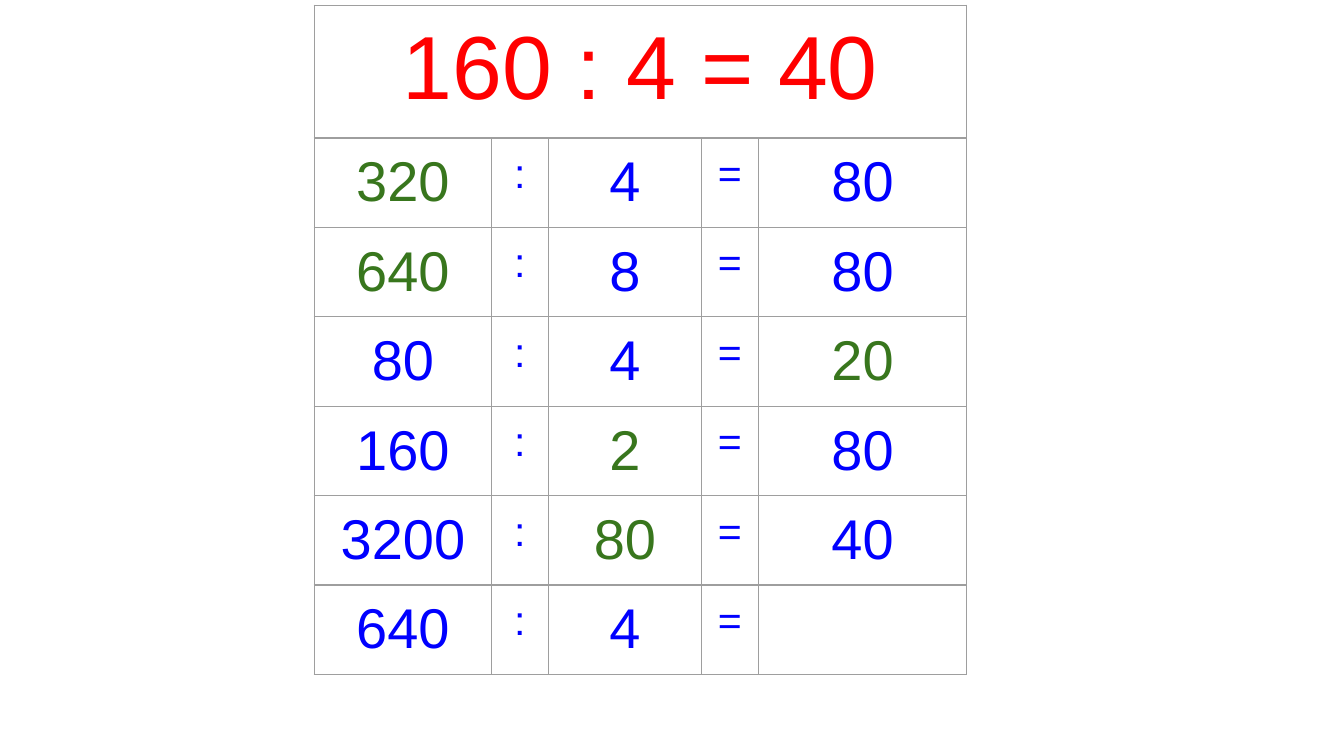
from lxml import etree
from pptx import Presentation
from pptx import util as u
from pptx.dml.color import RGBColor
from pptx.enum import text
from pptx.oxml import ns

RED, GREEN, BLUE, GREY = "FF0000", "38761D", "0000FF", "9E9E9E"
COLS = [3.35, 1.07, 2.9, 1.07, 3.94]
HEAD, ROW = 2.51, 1.69
# dividend, divisor, quotient, position of the green number
SUMS = [
    ("320", "4", "80", 0),
    ("640", "8", "80", 0),
    ("80", "4", "20", 2),
    ("160", "2", "80", 1),
    ("3200", "80", "40", 1),
    ("640", "4", "", None),
]


def color(code):
    return RGBColor.from_string(code)


def write(frame, words, size=30, ink=BLUE, font="Arial"):
    para = frame.paragraphs[0]
    para.alignment = text.PP_ALIGN.CENTER
    if not words:
        return
    run = para.add_run()
    run.text = words
    run.font.name = font
    run.font.size = u.Pt(size)
    run.font.color.rgb = color(ink)


class Board:
    def __init__(self, slide, line=GREY, width=0.75, pad=0.25):
        self.slide = slide
        self.line = line
        self.width = width
        self.pad = pad

    def border(self, cell):
        props = cell._tc.get_or_add_tcPr()
        for side in ("a:lnL", "a:lnR", "a:lnT", "a:lnB"):
            edge = etree.SubElement(props, ns.qn(side), w=str(u.Pt(self.width)))
            fill = etree.SubElement(edge, ns.qn("a:solidFill"))
            etree.SubElement(fill, ns.qn("a:srgbClr"), val=self.line)

    def table(self, left, top, cols, rows):
        frame = self.slide.shapes.add_table(
            len(rows), len(cols), u.Cm(left), u.Cm(top),
            u.Cm(sum(cols)), u.Cm(sum(rows)))
        grid = frame.table
        grid.first_row = grid.horz_banding = False
        for col, width in zip(grid.columns, cols):
            col.width = u.Cm(width)
        for row, height in zip(grid.rows, rows):
            row.height = u.Cm(height)
        for cell in grid.iter_cells():
            self.border(cell)
            cell.fill.background()
            cell.margin_left = cell.margin_right = u.Cm(self.pad)
            cell.margin_top = cell.margin_bottom = u.Cm(self.pad)
        return grid


def main():
    deck = Presentation()
    deck.slide_width, deck.slide_height = u.Cm(25.4), u.Cm(14.29)
    board = Board(deck.slides.add_slide(deck.slide_layouts[6]))

    grid = board.table(5.94, 0.1, COLS, [HEAD] + [ROW] * len(SUMS))
    grid.cell(0, 0).merge(grid.cell(0, len(COLS) - 1))
    write(grid.cell(0, 0).text_frame, "160 : 4 = 40", size=48, ink=RED)

    for row, (*nums, mark) in enumerate(SUMS, 1):
        for i, num in enumerate(nums):
            ink = GREEN if i == mark else BLUE
            write(grid.cell(row, 2 * i).text_frame, num, ink=ink)
        for col, sign in ((1, ":"), (3, "=")):
            write(grid.cell(row, col).text_frame, sign, size=22)

    deck.save("out.pptx")


if __name__ == "__main__":
    main()
